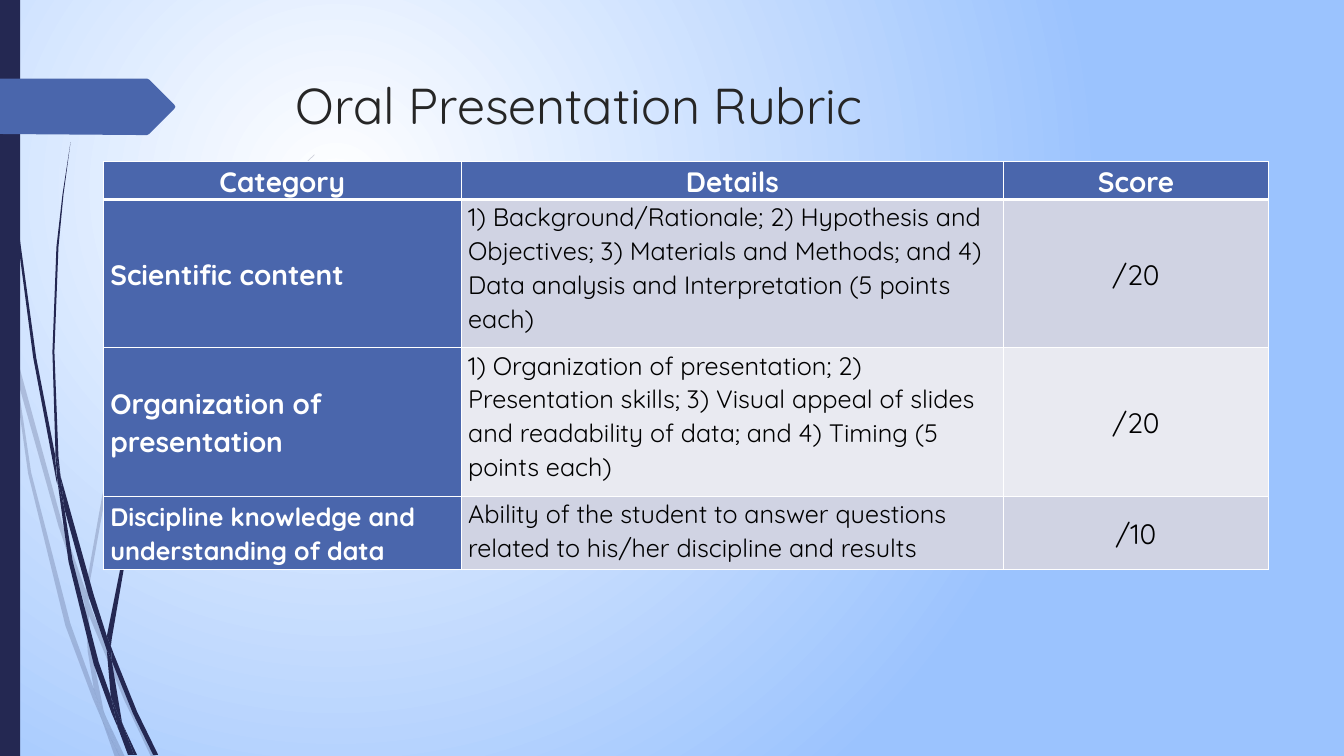
from lxml.etree import SubElement
from pptx import Presentation
from pptx.dml.color import RGBColor
from pptx.enum.shapes import MSO_SHAPE
from pptx.enum.text import MSO_ANCHOR, MSO_AUTO_SIZE, PP_ALIGN
from pptx.oxml import parse_xml
from pptx.oxml.ns import nsdecls, qn
from pptx.util import Pt

FONT = "Quicksand"
TITLE = "Oral Presentation Rubric"
COLORS = {
    "navy": "242852", "blue": "4A66AC", "sky": "9BC3FE", "white": "FFFFFF",
    "ink": "262626", "black": "000000", "band": "D0D3E3", "pale": "E9EAF1",
}
HEADS = ("Category", "Details", "Score")
ROWS = [
    ("Scientific content",
     "1) Background/Rationale; 2) Hypothesis and Objectives; 3) Materials and Methods; "
     "and 4) Data analysis and Interpretation (5 points each)",
     "/20"),
    ("Organization of presentation",
     "1) Organization of presentation; 2) Presentation skills; 3) Visual appeal of slides "
     "and readability of data; and 4) Timing (5 points each)",
     "/20"),
    ("Discipline knowledge and understanding of data",
     "Ability of the student to answer questions related to his/her discipline and results",
     "/10"),
]
WIDTHS = (255.6, 387.4, 189.4)
HEIGHTS = (26, 106, 106, 52.6)

UNIT = Pt(0.72)
FAINT = [
    [(11, 350), (9, 322), (0, 282), (0, 299), (10, 344)],
    [(58, 522), (84, 599), (85, 586), (62, 520), (14, 345), (17, 376)],
    [(92, 607), (88, 596), (88, 610), (123, 694), (150, 751), (155, 751), (127, 692)],
    [(119, 751), (124, 751), (105, 711)],
    [(93, 683), (70, 619), (31, 469), (17, 376), (11, 350), (28, 470), (65, 621),
     (92, 693), (101, 714), (99, 707)],
    [(84, 599), (87, 646), (93, 683), (96, 692), (105, 711), (103, 706), (91, 646),
     (88, 610), (88, 608)],
    [(88, 584), (110, 462), (160, 349), (229, 245), (268, 198), (290, 175), (312, 154),
     (312, 153), (289, 175), (268, 197), (228, 244), (158, 348), (107, 461), (85, 584),
     (85, 586), (88, 596)],
    [(101, 714), (114, 751), (119, 751)],
    [(88, 608), (88, 610), (88, 596), (85, 586), (84, 599)],
    [(96, 692), (93, 683), (99, 707), (101, 714), (119, 751), (105, 711)],
]
DARK = [
    [(7, 110), (17, 233), (33, 355), (56, 477), (57, 481), (55, 457), (55, 453),
     (36, 355), (19, 232), (8, 109), (5, 48), (4, 0), (3, 0), (4, 48)],
    [(88, 592), (106, 645), (106, 633), (106, 631), (93, 590), (60, 472), (64, 505)],
    [(113, 649), (110, 641), (111, 656), (132, 708), (152, 749), (157, 749), (136, 706)],
    [(110, 691), (98, 657), (72, 556), (64, 505), (57, 477), (68, 557), (93, 659),
     (111, 708), (117, 722), (116, 717)],
    [(60, 472), (58, 453), (54, 349), (58, 245), (63, 193), (70, 141), (62, 193),
     (56, 245), (52, 349), (55, 449)],
    [(133, 749), (136, 749), (122, 719)],
    [(57, 477), (64, 505), (60, 472), (55, 449), (55, 453)],
    [(111, 633), (125, 552), (158, 476), (205, 406), (231, 374), (245, 359), (261, 344),
     (260, 344), (245, 358), (231, 373), (204, 405), (156, 474), (122, 551), (106, 631),
     (110, 641)],
    [(117, 722), (127, 749), (131, 749)],
    [(106, 645), (110, 691), (116, 706), (122, 719), (121, 716), (111, 656), (109, 651)],
    [(106, 645), (109, 651), (111, 656), (110, 641), (106, 631), (106, 633)],
    [(116, 706), (110, 691), (116, 717), (117, 722), (130, 749), (133, 749), (122, 719)],
]
FLAG = [(173, 108), (148, 133), (146, 134), (136, 134), (0, 133), (0, 78), (136, 78),
        (146, 78), (148, 79), (173, 104), (174, 106)]


def tone(name):
    return RGBColor.from_string(COLORS[name])


def paint(shape, name):
    shape.shadow.inherit = False
    shape.fill.solid()
    shape.fill.fore_color.rgb = tone(name)
    shape.line.fill.background()


def draw_form(slide, knots, name):
    form = slide.shapes.build_freeform(*knots[0], scale=UNIT)
    form.add_line_segments(knots[1:], close=True)
    shape = form.convert_to_shape()
    paint(shape, name)
    return shape


def draw_stems(slide):
    for knots in FAINT:
        stem = draw_form(slide, knots, "navy")
        color = next(stem.element.spPr.iter(qn("a:srgbClr")))
        SubElement(color, qn("a:alpha"), val="20000")
    for knots in DARK:
        draw_form(slide, knots, "navy")


def style(frame, size, color, bold=False):
    for run in frame.paragraphs[0].runs:
        font = run.font
        font.name, font.size, font.bold = FONT, Pt(size), bold
        font.color.rgb = tone(color)


def border(cell, row):
    props = cell._tc.get_or_add_tcPr()
    for i, side in enumerate("LRTB"):
        thick = (row, side) in ((0, "B"), (1, "T"))
        props.insert(i, parse_xml(
            f'<a:ln{side} {nsdecls("a")} w="{Pt(3 if thick else 1)}"><a:solidFill>'
            f'<a:srgbClr val="{COLORS["white"]}"/></a:solidFill></a:ln{side}>'))


def fill_cell(cell, text, row, col):
    head = row == 0 or col == 0
    cell.fill.solid()
    cell.fill.fore_color.rgb = tone("blue" if head else "band" if row % 2 else "pale")
    border(cell, row)
    cell.margin_left = cell.margin_right = Pt(5)
    cell.margin_top = cell.margin_bottom = 0
    cell.vertical_anchor = MSO_ANCHOR.MIDDLE if row and col != 1 else MSO_ANCHOR.TOP
    cell.text_frame.text = text
    para = cell.text_frame.paragraphs[0]
    para.line_spacing = 1.07
    para.alignment = PP_ALIGN.CENTER if row == 0 or col == 2 else PP_ALIGN.LEFT
    small = row and (col == 1 or (row == 3 and col == 0))
    style(cell.text_frame, 18 if small else 20, "white" if head else "black", head)


def draw_back(slide):
    fill = slide.background.fill
    fill.gradient()
    for stop, (place, name) in zip(fill.gradient_stops, ((0, "white"), (1, "sky"))):
        stop.position = place
        stop.color.rgb = tone(name)
    line = next(slide.element.iter(qn("a:lin")))
    line.getparent().replace(line, parse_xml(
        f'<a:path {nsdecls("a")} path="circle">'
        '<a:fillToRect l="50000" t="50000" r="100000" b="100000"/></a:path>'))


def draw_table(slide):
    frame = slide.shapes.add_table(
        len(ROWS) + 1, len(HEADS), Pt(73.8), Pt(115.6), Pt(sum(WIDTHS)), Pt(sum(HEIGHTS)))
    table = frame.table
    table.horz_banding = False
    for column, width in zip(table.columns, WIDTHS):
        column.width = Pt(width)
    for row, (height, texts) in enumerate(zip(HEIGHTS, [HEADS, *ROWS])):
        table.rows[row].height = Pt(height)
        for col, text in enumerate(texts):
            fill_cell(table.cell(row, col), text, row, col)


def draw_title(slide):
    title = slide.shapes.title
    title.left, title.top, title.width, title.height = Pt(204), Pt(49), Pt(702), Pt(100.8)
    frame = title.text_frame
    frame.text = TITLE
    frame.auto_size = MSO_AUTO_SIZE.NONE
    frame.vertical_anchor = MSO_ANCHOR.TOP
    frame.paragraphs[0].alignment = PP_ALIGN.LEFT
    style(frame, 36, "ink")


def main():
    deck = Presentation()
    deck.slide_width, deck.slide_height = Pt(960), Pt(540)
    slide = deck.slides.add_slide(deck.slide_layouts[5])
    draw_back(slide)
    draw_stems(slide)
    bar = slide.shapes.add_shape(MSO_SHAPE.RECTANGLE, 0, 0, Pt(14.4), Pt(540))
    paint(bar, "navy")
    draw_form(slide, FLAG, "blue")
    draw_title(slide)
    draw_table(slide)
    deck.save("out.pptx")


if __name__ == "__main__":
    main()
